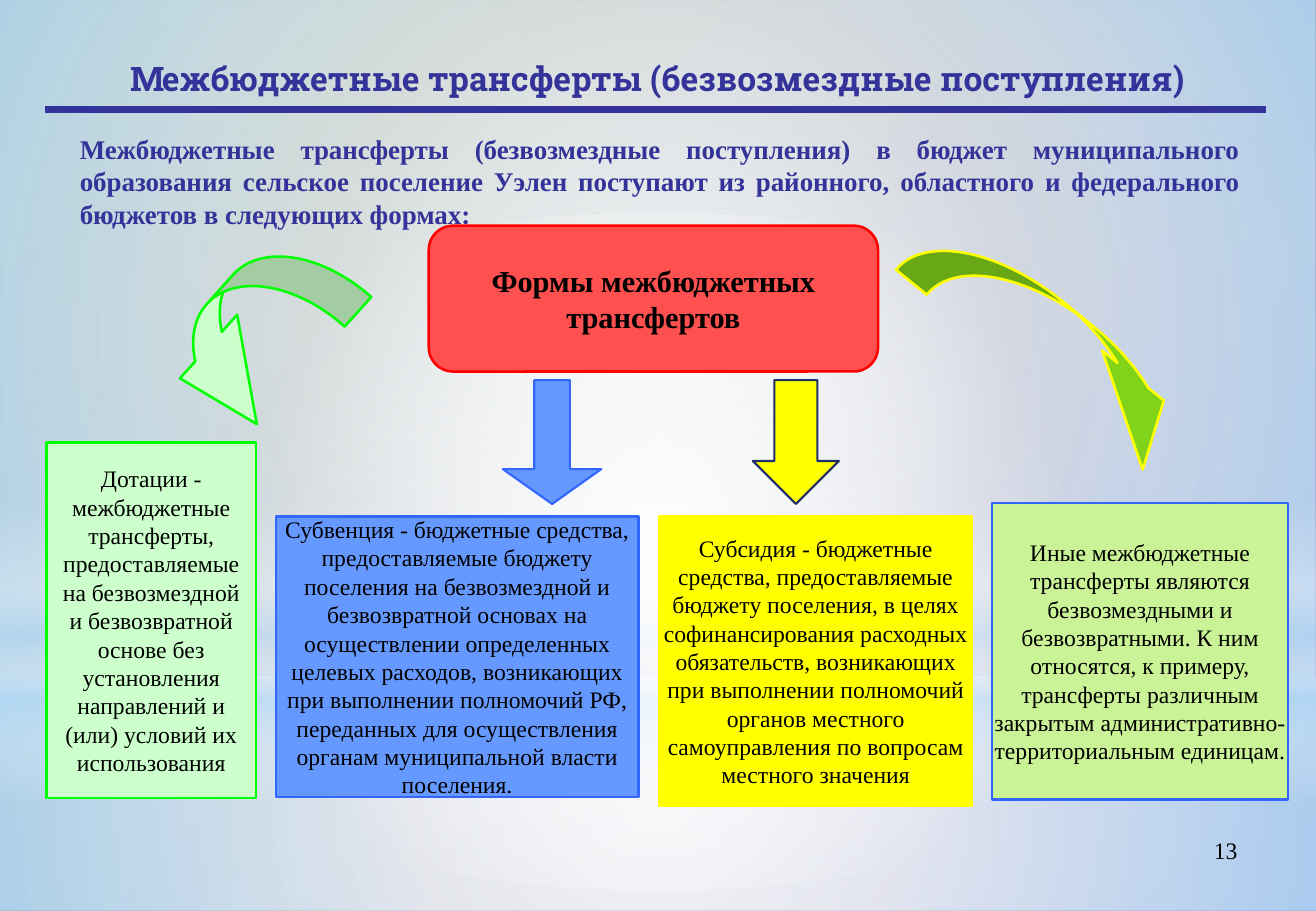
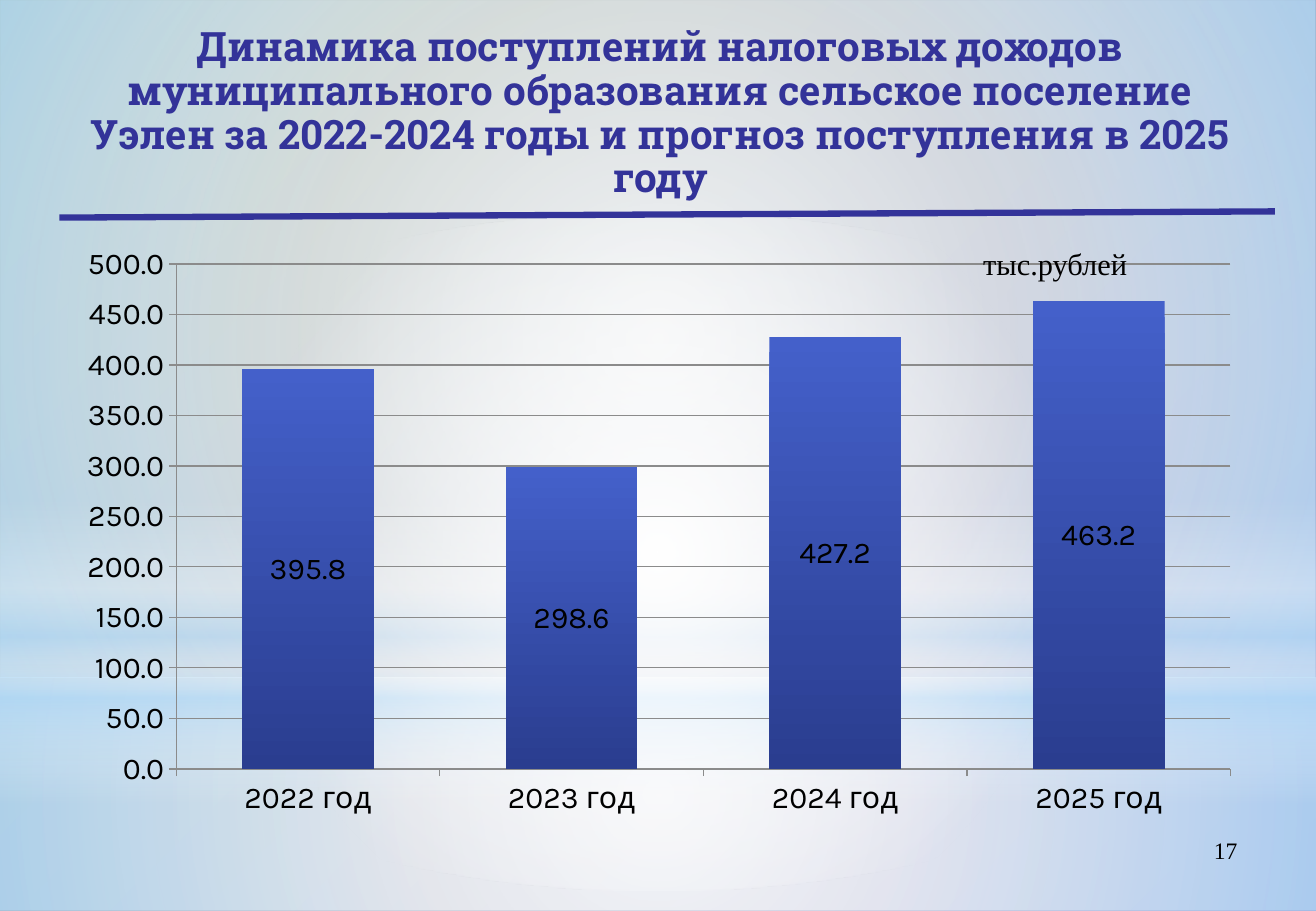
from lxml.etree import SubElement
from pptx import Presentation
from pptx.chart.data import CategoryChartData
from pptx.dml.color import RGBColor
from pptx.enum.chart import XL_CHART_TYPE as ChartType, XL_LABEL_POSITION as LabelPosition
from pptx.enum.chart import XL_TICK_MARK as TickMark
from pptx.enum.shapes import MSO_CONNECTOR as Connector, MSO_SHAPE as Shape
from pptx.enum.text import MSO_ANCHOR as Anchor, MSO_AUTO_SIZE as AutoSize, PP_ALIGN as Align
from pptx.oxml import parse_xml
from pptx.oxml.ns import nsdecls, qn
from pptx.util import Cm, Pt

rgb = RGBColor.from_string
INDIGO, BLACK, GRID = "333399", "000000", "8B8B8B"
SERIF = "Times New Roman"
BODY = {"name": SERIF, "size": Pt(14), "bold": False}
INTRO = {"name": SERIF, "size": Pt(16), "bold": True}
HEADING = {"name": SERIF, "size": Pt(18), "bold": True}
UNIT = {"name": SERIF, "size": Pt(18), "bold": False}
TITLE = {"name": "Roboto Slab", "bold": True}
CHART_FONT = {"name": "Karla", "size": Pt(17.9)}
CIRCLE = '<a:path path="circle"><a:fillToRect l="50000" t="50000" r="50000" b="50000"/></a:path>'
LINEAR = '<a:lin ang="{}" scaled="0"/>'


def fill_gradient(fill, element, stops, direction):
    fill.solid()
    solid = element.xpath(".//a:solidFill")[0]
    stop_xml = "".join(
        f'<a:gs pos="{position * 1000}"><a:srgbClr val="{color}">'
        f'<a:alpha val="{opacity * 1000}"/></a:srgbClr></a:gs>'
        for position, color, opacity in stops
    )
    gradient = parse_xml(
        f'<a:gradFill {nsdecls("a")} rotWithShape="1"><a:gsLst>{stop_xml}</a:gsLst>{direction}</a:gradFill>'
    )
    solid.getparent().replace(solid, gradient)


def write_text(shape, text, font_format, color=BLACK, align=Align.CENTER, anchor=Anchor.MIDDLE,
               side=0.25, edge=0.13, wrap=True):
    frame = shape.text_frame
    frame.text = text
    frame_format = {
        "word_wrap": wrap, "auto_size": AutoSize.NONE, "vertical_anchor": anchor,
        "margin_left": Cm(side), "margin_right": Cm(side),
        "margin_top": Cm(edge), "margin_bottom": Cm(edge),
    }
    for name, value in frame_format.items():
        setattr(frame, name, value)
    paragraph = frame.paragraphs[0]
    paragraph.alignment = align
    for name, value in font_format.items():
        setattr(paragraph.font, name, value)
    paragraph.font.color.rgb = rgb(color)
    return paragraph


presentation = Presentation()
presentation.slide_width, presentation.slide_height = Cm(27.53), Cm(19.05)
master = presentation.slide_master
title_only = presentation.slide_layouts[5]

fill_gradient(master.background.fill, master.element,
              [(0, "96AB94", 100), (100, "8488C4", 100)], LINEAR.format(2700000))

slide_specs = [
    ("Межбюджетные трансферты (безвозмездные поступления)", 20,
     (1.37, 0.97, 24.77, 1.42), (0.94, 2.29, 26.49, 2.29), "13"),
    ("Динамика поступлений налоговых доходов муниципального образования сельское поселение "
     "Уэлен за 2022-2024 годы и прогноз поступления в 2025 году", 24,
     (1.42, 0.25, 24.77, 4.27), (1.24, 4.55, 26.67, 4.42), "17"),
]
slides = []
for title_text, title_size, title_box, rule_ends, number in slide_specs:
    slide = presentation.slides.add_slide(title_only)
    slides.append(slide)
    title = slide.shapes.title
    title.left, title.top, title.width, title.height = map(Cm, title_box)
    paragraph = write_text(title, title_text, {**TITLE, "size": Pt(title_size)}, INDIGO)
    paragraph.line_spacing = 0.9
    rule = slide.shapes.add_connector(Connector.STRAIGHT, *map(Cm, rule_ends))
    rule.line.color.rgb = rgb(INDIGO)
    rule.line.width = Pt(3.75)
    SubElement(rule.element.spPr, qn("a:effectLst"))
    number_box = slide.shapes.add_textbox(Cm(19.71), Cm(17.35), Cm(6.43), Cm(1.32))
    write_text(number_box, number, BODY, align=Align.RIGHT, anchor=Anchor.TOP)
transfers, revenue = slides

backdrop = [
    (Shape.RECTANGLE, 14.17, 4.88, CIRCLE,
     [(0, "FFFFFF", 91), (37, "FFFFFF", 76), (100, "B4DCFA", 79)]),
    (Shape.RECTANGLE, 0, 14.17, CIRCLE,
     [(0, "FFFFFF", 89), (48, "FFFFFF", 62), (100, "B4DCFA", 79)]),
    (Shape.RECTANGLE, 10.46, 6.35, LINEAR.format(5400000),
     [(0, "FFFFFF", 0), (29, "FFFFFF", 30), (45, "B4DCFA", 40),
      (55, "FFFFFF", 26), (65, "B4DCFA", 60), (100, "FFFFFF", 0)]),
    (Shape.OVAL, 4.45, 14.17, CIRCLE, [(0, "FFFFFF", 100), (56, "FFFFFF", 0)]),
]
for kind, top, height, direction, stops in backdrop:
    shape = transfers.shapes.add_shape(kind, 0, Cm(top), presentation.slide_width, Cm(height))
    shape.shadow.inherit = False
    shape.line.fill.background()
    fill_gradient(shape.fill, shape.element, stops, direction)
    master.shapes.element.append(shape.element)

intro = transfers.shapes.add_textbox(Cm(1.42), Cm(2.64), Cm(24.77), Cm(2))
write_text(
    intro,
    "Межбюджетные трансферты (безвозмездные поступления) в бюджет муниципального образования "
    "сельское поселение Уэлен поступают из районного, областного и федерального бюджетов "
    "в следующих формах:",
    INTRO, INDIGO, Align.JUSTIFY, Anchor.TOP,
)

boxes = [
    (Shape.ROUNDED_RECTANGLE, (8.97, 4.72, 9.4, 3.05), "FF5050", "FF0000", HEADING, 0.36,
     "Формы межбюджетных трансфертов"),
    (Shape.RECTANGLE, (0.97, 9.25, 4.39, 7.44), "CCFFCC", "00FF00", BODY, 0.3,
     "Дотации - межбюджетные трансферты, предоставляемые на безвозмездной и безвозвратной "
     "основе без установления направлений и (или) условий их использования"),
    (Shape.RECTANGLE, (5.77, 10.8, 7.59, 5.87), "6699FF", "3366FF", BODY, 0,
     "Субвенция - бюджетные средства, предоставляемые бюджету поселения на безвозмездной и "
     "безвозвратной основах на осуществлении определенных целевых расходов, возникающих при "
     "выполнении полномочий РФ, переданных для осуществления органам муниципальной власти поселения."),
    (Shape.RECTANGLE, (13.79, 10.8, 6.55, 6.05), "FFFF00", "FFFF00", BODY, 0,
     "Субсидия - бюджетные средства, предоставляемые бюджету поселения, в целях софинансирования "
     "расходных обязательств, возникающих при выполнении полномочий органов местного "
     "самоуправления по вопросам местного значения"),
    (Shape.RECTANGLE, (20.75, 10.52, 6.2, 6.2), "CAF297", "3366FF", BODY, 0,
     "Иные межбюджетные трансферты являются безвозмездными и безвозвратными. К ним относятся, "
     "к примеру, трансферты различным закрытым административно-территориальным единицам."),
]
for kind, box, fill, outline, font_format, side, text in boxes:
    shape = transfers.shapes.add_shape(kind, *map(Cm, box))
    shape.shadow.inherit = False
    shape.fill.solid()
    shape.fill.fore_color.rgb = rgb(fill)
    shape.line.color.rgb = rgb(outline)
    shape.line.width = Pt(1.5)
    write_text(shape, text, font_format, side=side, edge=0)

arrows = [
    (Shape.CURVED_UP_ARROW, (3.12, 5.82, 4.47, 2.46), 132, (0.338, 0.727, 0.747), "CCFFCC", "00FF00", 1.5),
    (Shape.CURVED_DOWN_ARROW, (18.44, 6.5, 7.47, 1.68), 39, (0.492, 0.987, 0.834), "81D31A", "FFFF00", 1.5),
    (Shape.DOWN_ARROW, (10.52, 7.95, 2.06, 2.59), 0, (0.362, 0.354), "6699FF", "3366FF", 1.25),
    (Shape.DOWN_ARROW, (15.75, 7.95, 1.8, 2.59), 0, (0.5, 0.5), "FFFF00", "1F2E69", 1.25),
]
for kind, box, rotation, adjustments, fill, outline, width in arrows:
    arrow = transfers.shapes.add_shape(kind, *map(Cm, box))
    arrow.shadow.inherit = False
    arrow.rotation = rotation
    for index, value in enumerate(adjustments):
        arrow.adjustments[index] = value
    arrow.fill.solid()
    arrow.fill.fore_color.rgb = rgb(fill)
    arrow.line.color.rgb = rgb(outline)
    arrow.line.width = Pt(width)

chart_data = CategoryChartData(number_format="0.0")
chart_data.categories = [f"{year} год" for year in range(2022, 2026)]
chart_data.add_series("тыс.рублей", (395.8, 298.6, 427.2, 463.2))
chart = revenue.shapes.add_chart(
    ChartType.COLUMN_STACKED, Cm(1.32), Cm(4.9), Cm(24.92), Cm(12.42), chart_data
).chart
chart.has_legend = False
chart.has_title = False
for name, value in CHART_FONT.items():
    setattr(chart.font, name, value)
chart.font.color.rgb = rgb(BLACK)

plot = chart.plots[0]
plot_format = {"gap_width": 100, "overlap": 100, "vary_by_categories": False, "has_data_labels": True}
for name, value in plot_format.items():
    setattr(plot, name, value)
label_format = {"show_value": True, "number_format": "0.0", "number_format_is_linked": False,
                "position": LabelPosition.CENTER}
for name, value in label_format.items():
    setattr(plot.data_labels, name, value)

bar_fill = plot.series[0].format.fill
bar_fill.gradient()
bar_fill.gradient_angle = 270
for stop, color in zip(bar_fill.gradient_stops, ("4460CA", "2A3D8F")):
    stop.color.rgb = rgb(color)

value_axis = chart.value_axis
value_axis_format = {"minimum_scale": 0, "maximum_scale": 500, "major_unit": 50, "has_major_gridlines": True}
for name, value in value_axis_format.items():
    setattr(value_axis, name, value)
value_axis.tick_labels.number_format = "0.0"
value_axis.tick_labels.number_format_is_linked = False
for axis in (value_axis, chart.category_axis):
    axis.major_tick_mark = TickMark.OUTSIDE
for line in (value_axis.format.line, chart.category_axis.format.line, value_axis.major_gridlines.format.line):
    line.color.rgb = rgb(GRID)
    line.width = Pt(0.75)

unit = revenue.shapes.add_textbox(Cm(20.32), Cm(5), Cm(3.56), Cm(1.02))
write_text(unit, "тыс.рублей", UNIT, align=Align.LEFT, anchor=Anchor.TOP, wrap=False)

presentation.save("out.pptx")
